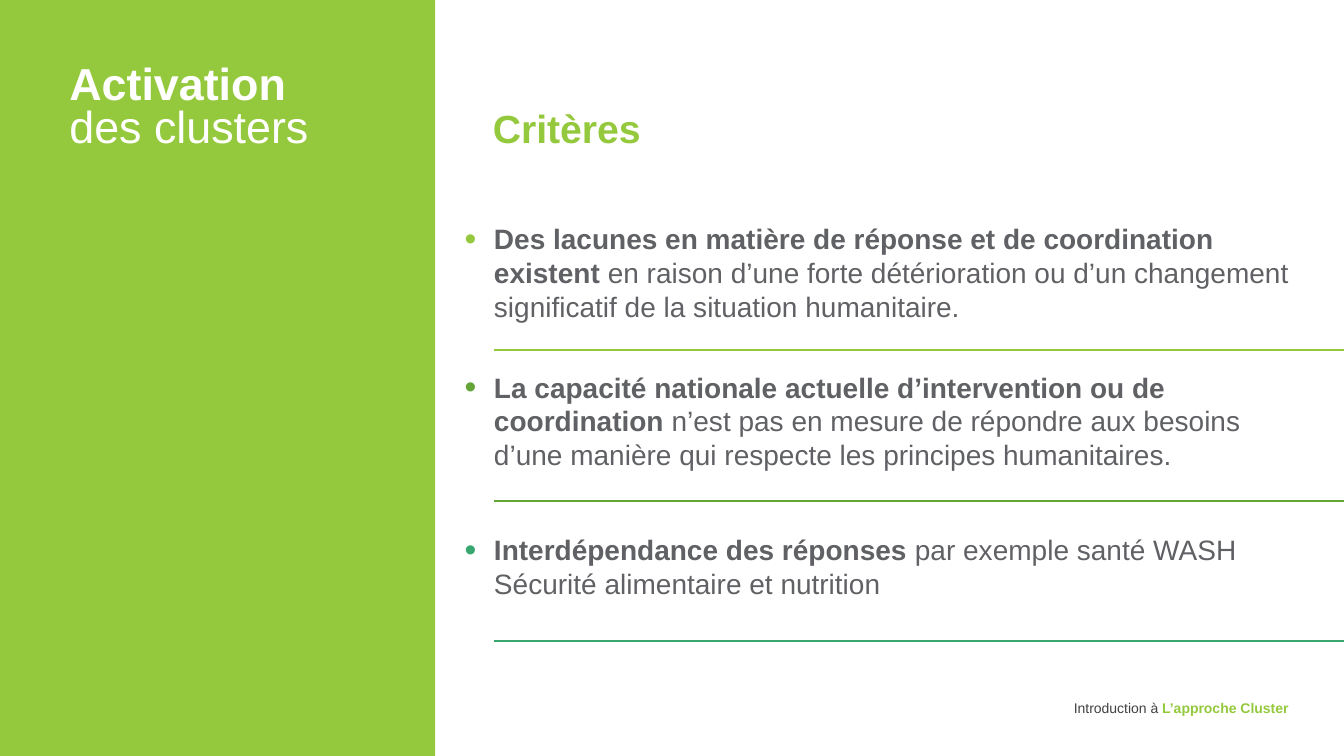
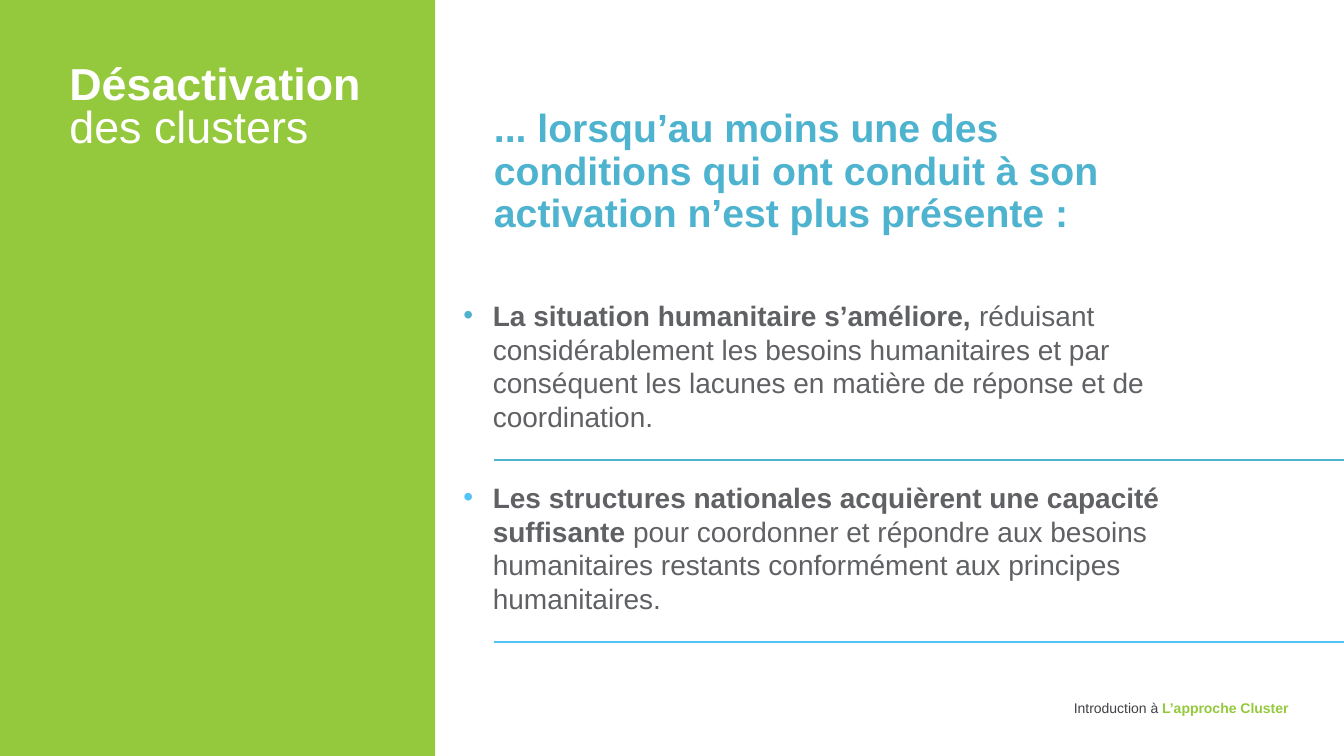
"""Two slides on when clusters are activated and deactivated."""
from lxml.etree import SubElement as Sub
from pptx import Presentation
from pptx.dml.color import RGBColor
from pptx.enum.shapes import MSO_CONNECTOR as Link, MSO_SHAPE as Kind
from pptx.enum.text import MSO_ANCHOR as Anchor, PP_ALIGN as Align
from pptx.oxml.ns import qn
from pptx.util import Cm, Pt

WHITE = RGBColor(0xFF, 0xFF, 0xFF)
LIME = RGBColor(0x95, 0xC9, 0x3D)
GREEN = RGBColor(0x63, 0xA5, 0x37)
TEAL = RGBColor(0x37, 0xA7, 0x6F)
BLUE = RGBColor(0x4E, 0xB3, 0xCF)
SKY = RGBColor(0x51, 0xC3, 0xF9)
GREY = RGBColor(0x60, 0x61, 0x64)
DARK = RGBColor(0x40, 0x41, 0x43)
FONT = "Arial"
WIDE, HIGH = Cm(33.87), Cm(19.05)
LEFT = Cm(12.45)
HANG = Cm(0.74)

PAGES = [
    {
        "title": "Activation",
        "head": "Critères", "tint": LIME, "lead": 1.0,
        "spot": (12.42, 2.49, 7.77, 1.45),
        "body": (11.71, 5.46, 21.41, 9.63), "dot": 120,
        "items": [
            ("Des lacunes en matière de réponse et de coordination existent",
             " en raison d’une forte détérioration ou d’un changement "
             "significatif de la situation humanitaire.", LIME, 0, 8.81),
            ("La capacité nationale actuelle d’intervention ou de coordination",
             " n’est pas en mesure de répondre aux besoins d’une manière qui "
             "respecte les principes humanitaires.", GREEN, 34, 12.62),
            ("Interdépendance des réponses",
             " par exemple santé WASH Sécurité alimentaire et nutrition",
             TEAL, 44, 16.15),
        ],
    },
    {
        "title": "Désactivation",
        "head": "... lorsqu’au moins une des conditions qui ont conduit à son "
                "activation n’est plus présente :",
        "tint": BLUE, "lead": 0.9,
        "spot": (12.45, 2.62, 16.61, 3.51),
        "body": (11.68, 7.39, 19.51, 8.31), "dot": 100,
        "items": [
            ("La situation humanitaire s’améliore,",
             " réduisant considérablement les besoins humanitaires et par "
             "conséquent les lacunes en matière de réponse et de coordination.",
             BLUE, 0, 11.58),
            ("Les structures nationales acquièrent une capacité suffisante",
             " pour coordonner et répondre aux besoins humanitaires restants "
             "conformément aux principes humanitaires.", SKY, 34, 16.18),
        ],
    },
]


def add_box(slide, spot, pads=(0, 0.13, 0.25, 0.13)):
    """Add a wrapping text box and return its frame."""
    frame = slide.shapes.add_textbox(*map(Cm, spot)).text_frame
    frame.word_wrap = True
    (frame.margin_left, frame.margin_top,
     frame.margin_right, frame.margin_bottom) = map(Cm, pads)
    return frame


def style(para, size, color, lead=1.0):
    """Set the font and line spacing of a paragraph."""
    para.line_spacing = lead
    para.font.name = FONT
    para.font.size = Pt(size)
    para.font.color.rgb = color


deck = Presentation()
deck.slide_width, deck.slide_height = WIDE, HIGH

for page in PAGES:
    slide = deck.slides.add_slide(deck.slide_layouts[6])

    band = slide.shapes.add_shape(Kind.RECTANGLE, 0, 0, Cm(10.97), HIGH)
    band.shadow.inherit = False
    band.fill.solid()
    band.fill.fore_color.rgb = LIME
    band.line.fill.background()

    frame = add_box(slide, (1.75, 1.85, 9.22, 1.8))
    frame.vertical_anchor = Anchor.MIDDLE
    para = frame.paragraphs[0]
    style(para, 32, WHITE, 0.8)
    run = para.add_run()
    run.text = page["title"]
    run.font.bold = True
    para.add_line_break()
    para.add_run().text = "des clusters"

    para = add_box(slide, page["spot"]).paragraphs[0]
    style(para, 28, page["tint"], page["lead"])
    para.font.bold = True
    para.add_run().text = page["head"]

    frame = add_box(slide, page["body"])
    for i, (bold, plain, color, gap, y) in enumerate(page["items"]):
        para = frame.add_paragraph() if i else frame.paragraphs[0]
        props = para._p.get_or_add_pPr()
        props.set("marL", str(HANG))
        props.set("indent", str(-HANG))
        Sub(Sub(props, qn("a:buClr")), qn("a:srgbClr"), val=str(color))
        Sub(props, qn("a:buSzPct"), val=str(page["dot"] * 1000))
        Sub(props, qn("a:buFont"), typeface=FONT)
        Sub(props, qn("a:buChar"), char="•")
        style(para, 20, GREY)
        para.space_before = Pt(gap)
        run = para.add_run()
        run.text = bold
        run.font.bold = True
        para.add_run().text = plain

        rule = slide.shapes.add_connector(
            Link.STRAIGHT, LEFT, Cm(y), WIDE, Cm(y))
        rule.line.color.rgb = color
        rule.line.width = Pt(1.5)
        Sub(rule._element.spPr, qn("a:effectLst"))

    foot = add_box(slide, (21.62, 17.55, 10.85, 0.69), (0.25, 0.25, 0, 0.25))
    para = foot.paragraphs[0]
    para.alignment = Align.RIGHT
    style(para, 10, DARK, 0.8)
    para.add_run().text = "Introduction à "
    run = para.add_run()
    run.text = "L’approche Cluster"
    run.font.bold = True
    run.font.color.rgb = LIME

deck.save("out.pptx")
